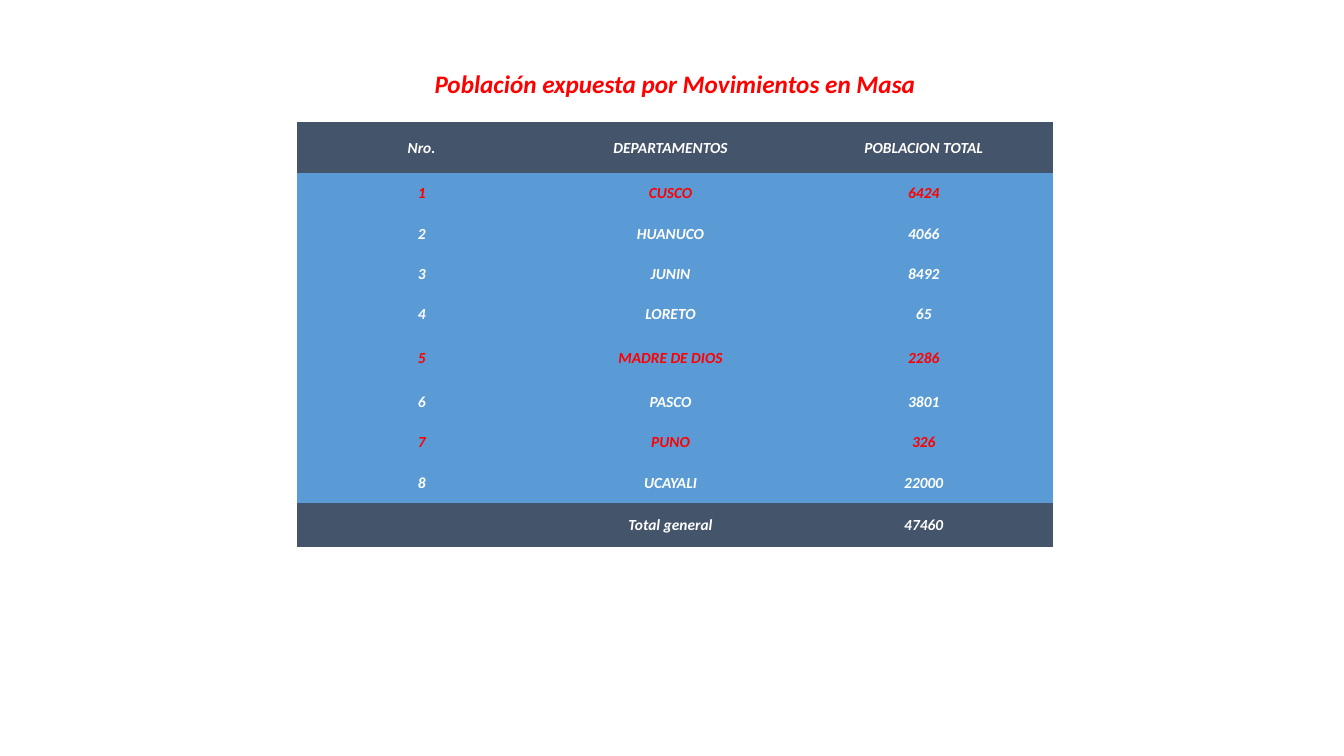
"""Build the slide on the population exposed to mass movements, by department."""
from dataclasses import dataclass

from pptx import Presentation
from pptx import util as u
from pptx.dml.color import RGBColor
from pptx.enum import text
from pptx.slide import Slide


@dataclass(frozen=True)
class Theme:
    font: str = "Calibri"
    title_size: float = 18
    table_size: float = 11
    accent: str = "FF0000"
    light: str = "FFFFFF"
    band: str = "44546A"
    body: str = "5B9BD5"


@dataclass(frozen=True)
class Row:
    number: str
    department: str
    population: str
    height: float = 28.9
    highlighted: bool = False
    banded: bool = False


THEME = Theme()
PLAIN_STYLE = "{2D5ABB26-0587-4C30-8999-92F81FD0307C}"
COLUMN_WIDTHS = (177.8, 177.8, 184)
ROWS = (
    Row("Nro.", "DEPARTAMENTOS", "POBLACION TOTAL", height=36.2, banded=True),
    Row("1", "CUSCO", "6424", highlighted=True),
    Row("2", "HUANUCO", "4066"),
    Row("3", "JUNIN", "8492"),
    Row("4", "LORETO", "65"),
    Row("5", "MADRE DE DIOS", "2286", height=33.6, highlighted=True),
    Row("6", "PASCO", "3801"),
    Row("7", "PUNO", "326", highlighted=True),
    Row("8", "UCAYALI", "22000"),
    Row("", "Total general", "47460", height=31.4, banded=True),
)


def write(frame, wording: str, size: float, color: str) -> None:
    frame.text = wording
    paragraph = frame.paragraphs[0]
    paragraph.alignment = text.PP_ALIGN.CENTER
    paragraph.line_spacing = 1.0
    paragraph.font.size = u.Pt(size)
    for run in paragraph.runs:
        run.font.name = THEME.font
        run.font.size = u.Pt(size)
        run.font.bold = run.font.italic = True
        run.font.color.rgb = RGBColor.from_string(color)


def add_heading(slide: Slide) -> None:
    heading = slide.shapes.title
    heading.left, heading.top = u.Pt(301), u.Pt(45.4)
    heading.width, heading.height = u.Pt(362.2), u.Pt(29)
    frame = heading.text_frame
    write(frame, "Población expuesta por Movimientos en Masa", THEME.title_size, THEME.accent)
    frame.word_wrap = False
    frame.auto_size = text.MSO_AUTO_SIZE.SHAPE_TO_FIT_TEXT
    frame.vertical_anchor = text.MSO_ANCHOR.TOP


def fill_cell(cell, wording: str, row: Row) -> None:
    cell.margin_left = cell.margin_right = cell.margin_top = u.Pt(0.7)
    cell.margin_bottom = u.Pt(0)
    cell.vertical_anchor = text.MSO_ANCHOR.MIDDLE
    cell.fill.solid()
    cell.fill.fore_color.rgb = RGBColor.from_string(THEME.band if row.banded else THEME.body)
    write(cell.text_frame, wording, THEME.table_size, THEME.accent if row.highlighted else THEME.light)


def add_population_table(slide: Slide) -> None:
    holder = slide.shapes.add_table(
        len(ROWS), len(COLUMN_WIDTHS), u.Pt(212.3), u.Pt(87.1),
        u.Pt(sum(COLUMN_WIDTHS)), u.Pt(sum(row.height for row in ROWS)),
    )
    population = holder.table
    population.first_row = population.horz_banding = False
    for style in holder.element.iter("{*}tableStyleId"):
        style.text = PLAIN_STYLE
    for column, width in zip(population.columns, COLUMN_WIDTHS):
        column.width = u.Pt(width)
    for line, row in zip(population.rows, ROWS):
        line.height = u.Pt(row.height)
        for cell, wording in zip(line.cells, (row.number, row.department, row.population)):
            fill_cell(cell, wording, row)


def main() -> None:
    deck = Presentation()
    deck.slide_width, deck.slide_height = u.Pt(960), u.Pt(540)
    slide = deck.slides.add_slide(deck.slide_layouts.get_by_name("Title Only"))
    add_heading(slide)
    add_population_table(slide)
    deck.save("out.pptx")


if __name__ == "__main__":
    main()
